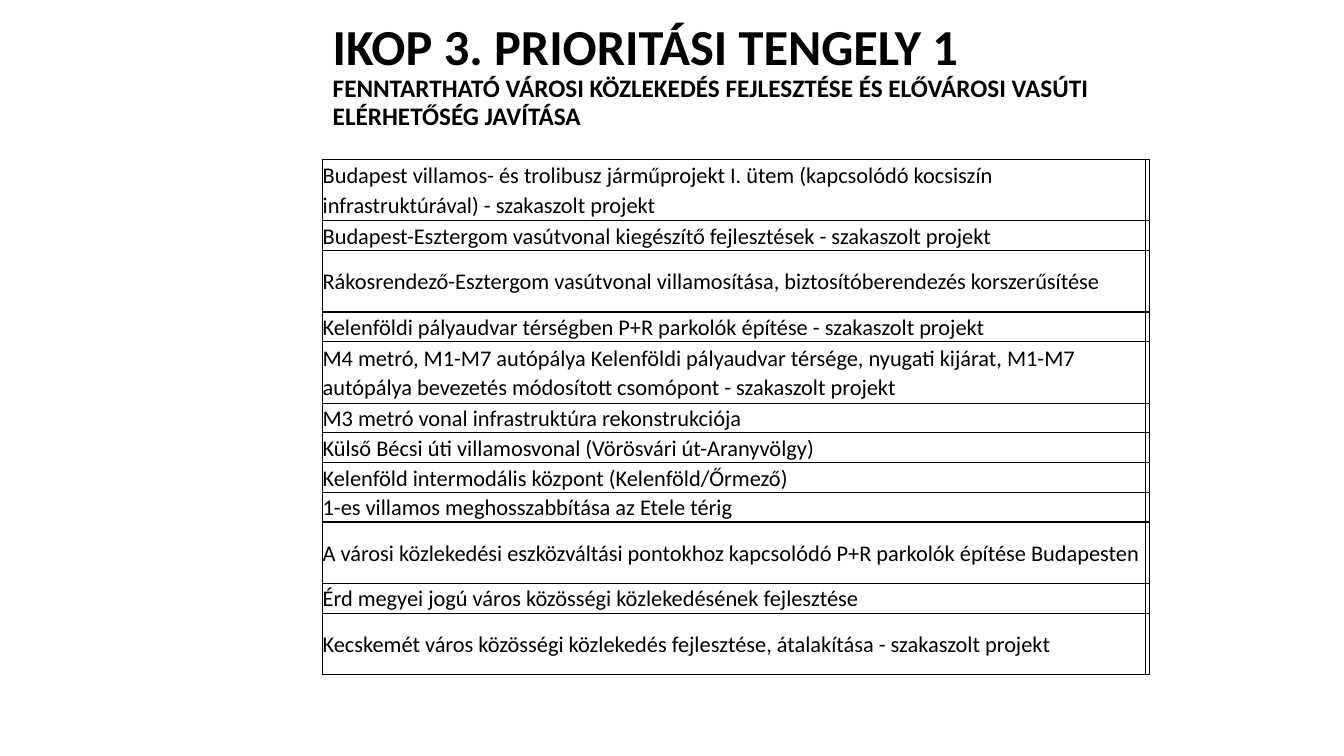
"""Builds the slide listing the urban transport projects of priority axis 3."""
from copy import deepcopy
from dataclasses import dataclass

from lxml.etree import SubElement as Sub
from pptx import Presentation
from pptx.dml.color import RGBColor as RGB
from pptx.enum.text import MSO_ANCHOR as Anchor, MSO_AUTO_SIZE as Fit, PP_ALIGN as Align
from pptx.oxml.ns import qn
from pptx.util import Inches, Pt


@dataclass
class Theme:
    font: str = "Calibri"
    ink: str = "000000"
    paper: str = "FFFFFF"
    title: int = 36
    subtitle: int = 18
    body: int = 16
    border: int = 1


def write(p, text, size, bold=False, spacing=1.0):
    p.alignment = Align.LEFT
    p.line_spacing = spacing
    r = p.add_run()
    r.text = text
    r.font.name = theme.font
    r.font.size = Pt(size)
    r.font.bold = bold
    r.font.color.rgb = RGB.from_string(theme.ink)
    return r


def set_borders(cell):
    tcPr = cell._tc.get_or_add_tcPr()
    for i, side in enumerate(("lnL", "lnR", "lnT", "lnB")):
        ln = tcPr.makeelement(qn(f"a:{side}"), {"w": str(Pt(theme.border))})
        Sub(Sub(ln, qn("a:solidFill")), qn("a:srgbClr"), val=theme.ink)
        tcPr.insert(i, ln)


theme = Theme()
prs = Presentation()
prs.slide_width, prs.slide_height = Inches(13.33), Inches(7.5)
left, width = Inches(3.2), Inches(8.2)
low, high = Inches(0.295), Inches(0.61)

s = prs.slides.add_slide(prs.slide_layouts[5])
title = s.shapes.title
title.left, title.top, title.width, title.height = left, Inches(0.13), width, Inches(1.25)
tf = title.text_frame
tf.word_wrap = True
tf.auto_size = Fit.NONE
tf.vertical_anchor = Anchor.MIDDLE
p = tf.paragraphs[0]
r = write(p, "IKOP 3. PRIORITÁSI TENGELY 1", theme.title, bold=True, spacing=0.9)
p.add_line_break()
p._p[-1].append(deepcopy(r.font._element))
write(p, "FENNTARTHATÓ VÁROSI KÖZLEKEDÉS FEJLESZTÉSE ÉS ELŐVÁROSI VASÚTI ELÉRHETŐSÉG JAVÍTÁSA",
      theme.subtitle, bold=True, spacing=0.9)

projects = [
    ("Budapest villamos- és trolibusz járműprojekt I. ütem (kapcsolódó kocsiszín "
     "infrastruktúrával) - szakaszolt projekt", high),
    ("Budapest-Esztergom vasútvonal kiegészítő fejlesztések - szakaszolt projekt", low),
    ("Rákosrendező-Esztergom vasútvonal villamosítása, biztosítóberendezés korszerűsítése", high),
    ("Kelenföldi pályaudvar térségben P+R parkolók építése - szakaszolt projekt", low),
    ("M4 metró, M1-M7 autópálya Kelenföldi pályaudvar térsége, nyugati kijárat, M1-M7 "
     "autópálya bevezetés módosított csomópont - szakaszolt projekt", high),
    ("M3 metró vonal infrastruktúra rekonstrukciója", low),
    ("Külső Bécsi úti villamosvonal (Vörösvári út-Aranyvölgy)", low),
    ("Kelenföld intermodális központ (Kelenföld/Őrmező)", low),
    ("1-es villamos meghosszabbítása az Etele térig", low),
    ("A városi közlekedési eszközváltási pontokhoz kapcsolódó P+R parkolók építése Budapesten", high),
    ("Érd megyei jogú város közösségi közlekedésének fejlesztése", low),
    ("Kecskemét város közösségi közlekedés fejlesztése, átalakítása - szakaszolt projekt", high),
]
total = sum(height for _, height in projects)
table = s.shapes.add_table(len(projects), 2, left, Inches(1.58), width, total).table
table.first_row = table.horz_banding = False
table.columns[1].width = Inches(0.04)
table.columns[0].width = width - table.columns[1].width

for row, (project, height) in zip(table.rows, projects):
    row.height = height
    for cell in row.cells:
        cell.margin_left = cell.margin_right = cell.margin_top = cell.margin_bottom = 0
        cell.vertical_anchor = Anchor.MIDDLE
        cell.fill.solid()
        cell.fill.fore_color.rgb = RGB.from_string(theme.paper)
        set_borders(cell)
    name, spare = row.cells
    write(name.text_frame.paragraphs[0], project, theme.body, spacing=1.07)
    Sub(spare.text_frame.paragraphs[0]._p, qn("a:endParaRPr"), sz=str(theme.body * 100))

prs.save("out.pptx")
